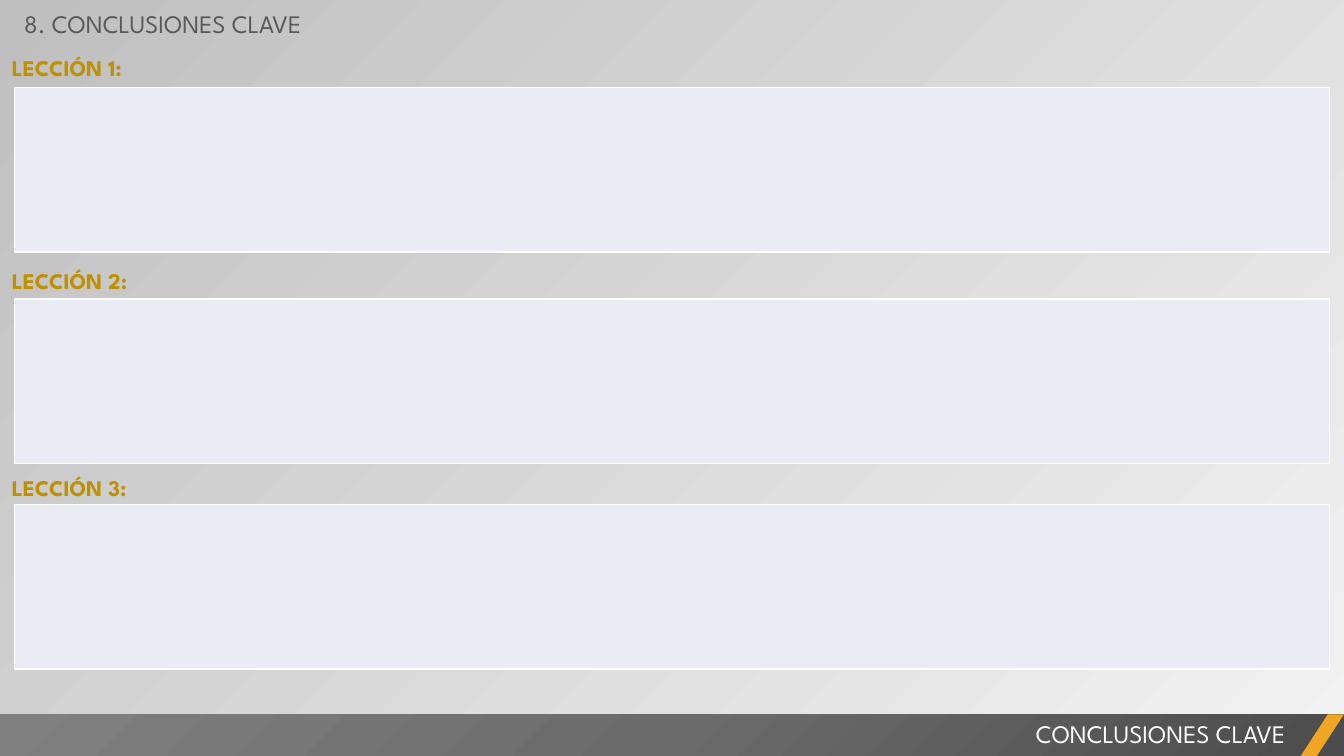
from copy import deepcopy

from lxml import etree
from pptx import Presentation
from pptx.dml.color import RGBColor
from pptx.enum.shapes import MSO_SHAPE
from pptx.enum.text import PP_ALIGN
from pptx.oxml.ns import qn
from pptx.util import Pt

RECTANGLE = MSO_SHAPE.RECTANGLE
PARALLELOGRAM = MSO_SHAPE.PARALLELOGRAM
LEFT, RIGHT = PP_ALIGN.LEFT, PP_ALIGN.RIGHT

FONT = "League Spartan"
SLIDE_WIDTH, SLIDE_HEIGHT = 960, 540
FOOTER_TOP, FOOTER_HEIGHT = 510.25, 30
BOX_LEFT, BOX_WIDTH, BOX_HEIGHT = 10.1, 939.8, 117.5
LESSONS = [  # label, label top, answer box top
    ("LECCIÓN 1:", 32.4, 62.5),
    ("LECCIÓN 2:", 184.4, 213.6),
    ("LECCIÓN 3:", 331.9, 360.3),
]


def rgb(value):
    return RGBColor.from_string(value)


def add_text(text, left, top, width, size=18, color="595959", bold=False,
             align=LEFT, line_spacing=None, inset=(7.2, 3.6)):
    frame = slide.shapes.add_textbox(Pt(left), Pt(top), Pt(width), Pt(29)).text_frame
    frame.word_wrap = True
    frame.margin_left = frame.margin_right = Pt(inset[0])
    frame.margin_top = frame.margin_bottom = Pt(inset[1])
    paragraph = frame.paragraphs[0]
    paragraph.alignment = align
    if line_spacing:
        paragraph.line_spacing = Pt(line_spacing)
    run = paragraph.add_run()
    run.text = text
    run.font.name = FONT
    run.font.size = Pt(size)
    run.font.bold = bold
    run.font.color.rgb = rgb(color)


prs = Presentation()
prs.slide_width, prs.slide_height = Pt(SLIDE_WIDTH), Pt(SLIDE_HEIGHT)
slide = prs.slides.add_slide(prs.slide_layouts[6])

# Background: light at bottom right, grey at top left
background = slide.background.fill
background.gradient()
background.gradient_angle = 135
for stop, color in zip(background.gradient_stops, ("F2F2F2", "BFBFBF")):
    stop.color.rgb = rgb(color)

# Lessons: a label above an empty answer box
for label, label_top, box_top in LESSONS:
    answer = slide.shapes.add_table(
        1, 1, Pt(BOX_LEFT), Pt(box_top), Pt(BOX_WIDTH), Pt(BOX_HEIGHT)).table
    answer.first_row = answer.horz_banding = False
    cell = answer.cell(0, 0)
    cell.fill.solid()
    cell.fill.fore_color.rgb = rgb("E9EBF5")
    cell_properties = cell._tc.get_or_add_tcPr()
    for position, side in enumerate(("lnL", "lnR", "lnT", "lnB")):
        border = etree.Element(qn(f"a:{side}"), w=str(Pt(1)))
        border_fill = etree.SubElement(border, qn("a:solidFill"))
        etree.SubElement(border_fill, qn("a:srgbClr"), val="FFFFFF")
        cell_properties.insert(position, border)
    add_text(label, 0, label_top, 549.4, size=16, color="BF9000", bold=True,
             line_spacing=21.5, inset=(8.6, 4.3))

# Footer bar: radial gradient centred on its bottom right corner
footer = slide.shapes.add_shape(
    RECTANGLE, 0, Pt(FOOTER_TOP), Pt(SLIDE_WIDTH), Pt(FOOTER_HEIGHT))
footer.shadow.inherit = False
footer.line.fill.background()
footer.fill.gradient()
gradient = footer._element.spPr.find(qn("a:gradFill"))
stop_list = gradient.find(qn("a:gsLst"))
middle_stop = deepcopy(stop_list[0])
middle_stop.set("pos", "50000")
stop_list.insert(1, middle_stop)
for stop, color in zip(footer.fill.gradient_stops, ("4C4C4C", "6B6B6B", "808080")):
    stop.color.rgb = rgb(color)
radial = etree.Element(qn("a:path"), path="circle")
etree.SubElement(radial, qn("a:fillToRect"), l="100000", t="100000")
gradient.replace(gradient.find(qn("a:lin")), radial)

add_text("CONCLUSIONES CLAVE", 378, 509.8, 547.2, color="FFFFFF", align=RIGHT)

accent = slide.shapes.add_shape(
    PARALLELOGRAM, Pt(929), Pt(FOOTER_TOP), Pt(31), Pt(FOOTER_HEIGHT))
accent.adjustments[0] = 0.65
accent.shadow.inherit = False
accent.fill.solid()
accent.fill.fore_color.rgb = rgb("F0A622")
accent.line.fill.background()

add_text("8. CONCLUSIONES CLAVE", 10.1, 2.2, 382.3)

prs.save("out.pptx")
